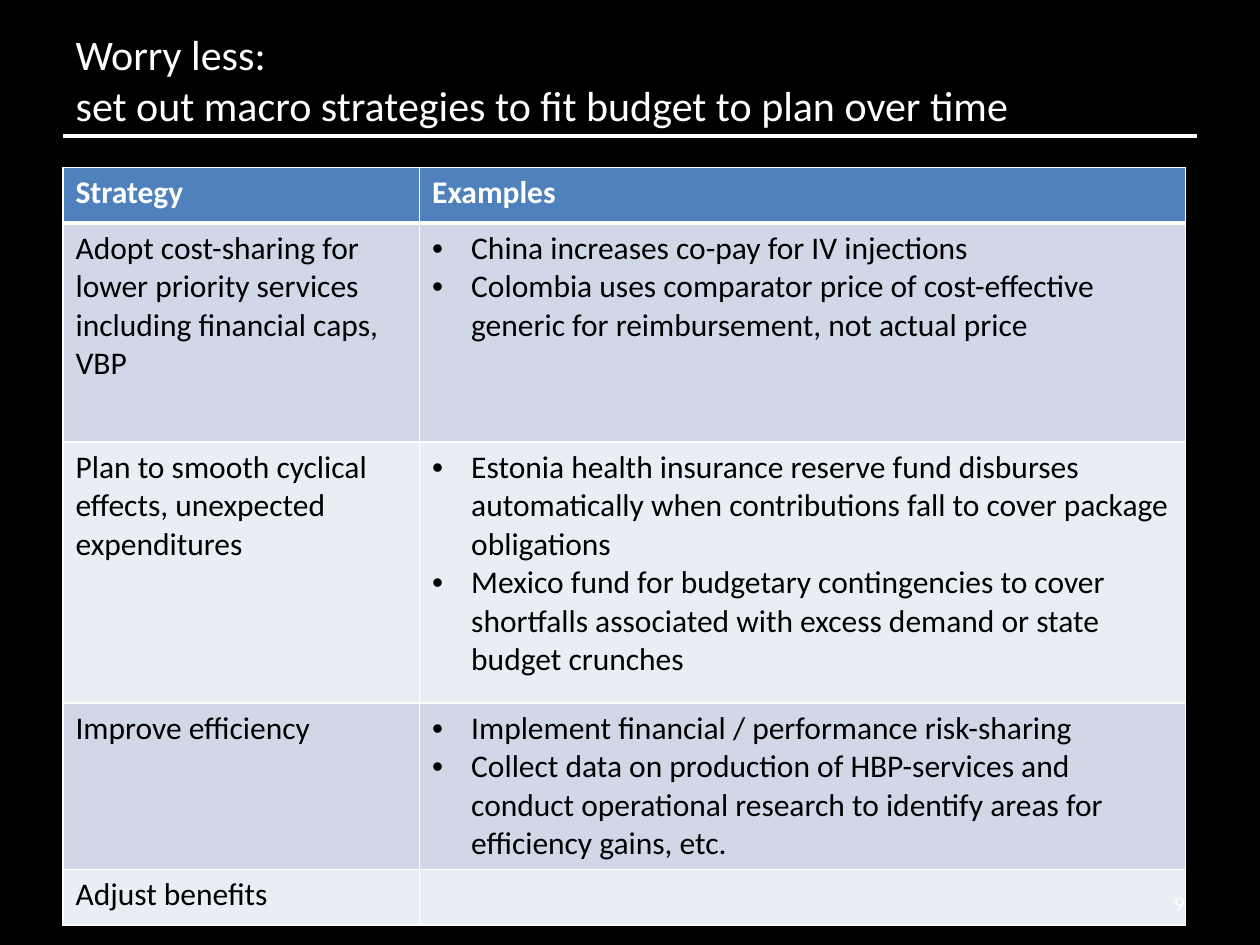
from typing import NamedTuple

from lxml.etree import SubElement
from pptx import Presentation
from pptx.dml.color import RGBColor
from pptx.enum.shapes import MSO_CONNECTOR
from pptx.enum.text import MSO_ANCHOR, MSO_AUTO_SIZE, PP_ALIGN
from pptx.oxml.ns import qn
from pptx.util import Inches, Pt

BLACK = RGBColor(0x00, 0x00, 0x00)
WHITE = RGBColor(0xFF, 0xFF, 0xFF)
HEADER_BLUE = RGBColor(0x4F, 0x81, 0xBD)
BAND_FILLS = (RGBColor(0xD0, 0xD8, 0xE8), RGBColor(0xE9, 0xED, 0xF4))

COLUMN_WIDTHS = (2.83, 6.08)
HEADER_HEIGHT = 0.44
BULLET_INDENT = Inches(0.31)


class Strategy(NamedTuple):
    name: str
    examples: tuple[str, ...]
    height: float


STRATEGIES = (
    Strategy(
        "Adopt cost-sharing for lower priority services including financial caps, VBP",
        (
            "China increases co-pay for IV injections",
            "Colombia uses comparator price of cost-effective generic for reimbursement, not actual price",
        ),
        1.74,
    ),
    Strategy(
        "Plan to smooth cyclical effects, unexpected expenditures",
        (
            "Estonia health insurance reserve fund disburses automatically when contributions fall to cover package obligations",
            "Mexico fund for budgetary contingencies to cover shortfalls associated with excess demand or state budget crunches",
        ),
        2.07,
    ),
    Strategy(
        "Improve efficiency",
        (
            "Implement financial / performance risk-sharing",
            "Collect data on production of HBP-services and conduct operational research to identify areas for efficiency gains, etc.",
        ),
        1.32,
    ),
    Strategy("Adjust benefits", (), 0.44),
)


def apply_format(target, values: dict) -> None:
    for name, value in values.items():
        setattr(target, name, value)


def format_text(paragraph, size: float, color: RGBColor, bold: bool = False) -> None:
    font = paragraph.font
    apply_format(font, {"name": "Calibri", "size": Pt(size), "bold": bold})
    font.color.rgb = color


def add_bullet(paragraph) -> None:
    properties = paragraph._p.get_or_add_pPr()
    properties.set("marL", str(BULLET_INDENT))
    properties.set("indent", str(-BULLET_INDENT))
    properties.insert_element_before(
        SubElement(properties, qn("a:buFont"), typeface="Arial"), "a:defRPr"
    )
    properties.insert_element_before(
        SubElement(properties, qn("a:buChar"), char="•"), "a:defRPr"
    )


def add_borders(cell, top: float, bottom: float) -> None:
    properties = cell._tc.get_or_add_tcPr()
    for side, width in (("L", 1), ("R", 1), ("T", top), ("B", bottom)):
        border = SubElement(properties, qn(f"a:ln{side}"), w=str(Pt(width)))
        border_fill = SubElement(border, qn("a:solidFill"))
        SubElement(border_fill, qn("a:srgbClr"), val=str(WHITE))


def fill_cell(cell, lines: tuple[str, ...], fill: RGBColor, header: bool = False,
              bulleted: bool = False, top: float = 1) -> None:
    add_borders(cell, top, 3 if header else 1)
    cell.fill.solid()
    cell.fill.fore_color.rgb = fill
    cell.text_frame.text = "\n".join(lines)
    for paragraph in cell.text_frame.paragraphs:
        format_text(paragraph, 18, WHITE if header else BLACK, header)
        if bulleted and lines:
            add_bullet(paragraph)


def add_title(slide) -> None:
    title = slide.shapes.title
    apply_format(title, {"left": Inches(0.5), "top": Inches(0.38),
                         "width": Inches(9), "height": Inches(0.7)})
    heading = title.text_frame
    heading.text = "Worry less:\vset out macro strategies to fit budget to plan over time"
    apply_format(heading, {"vertical_anchor": MSO_ANCHOR.BOTTOM, "word_wrap": True,
                           "auto_size": MSO_AUTO_SIZE.NONE})
    heading.paragraphs[0].alignment = PP_ALIGN.LEFT
    format_text(heading.paragraphs[0], 24, WHITE)


def add_title_rule(slide) -> None:
    rule = slide.shapes.add_connector(
        MSO_CONNECTOR.STRAIGHT, Inches(0.5), Inches(1.08), Inches(9.5), Inches(1.08))
    rule.line.color.rgb = WHITE
    rule.line.width = Pt(2.25)
    SubElement(rule._element.spPr, qn("a:effectLst"))


def add_strategy_table(slide) -> None:
    heights = (HEADER_HEIGHT, *(strategy.height for strategy in STRATEGIES))
    table = slide.shapes.add_table(
        len(heights), len(COLUMN_WIDTHS), Inches(0.5), Inches(1.33),
        Inches(sum(COLUMN_WIDTHS)), Inches(sum(heights))).table
    for column, width in zip(table.columns, COLUMN_WIDTHS):
        column.width = Inches(width)
    for row, height in zip(table.rows, heights):
        row.height = Inches(height)
    for index, heading in enumerate(("Strategy", "Examples")):
        fill_cell(table.cell(0, index), (heading,), HEADER_BLUE, header=True)
    for index, strategy in enumerate(STRATEGIES):
        fill = BAND_FILLS[index % 2]
        top = 3 if index == 0 else 1
        fill_cell(table.cell(index + 1, 0), (strategy.name,), fill, top=top)
        fill_cell(table.cell(index + 1, 1), strategy.examples, fill, bulleted=True, top=top)


def add_page_number(slide) -> None:
    page_number = slide.shapes.add_textbox(
        Inches(7.17), Inches(6.97), Inches(2.33), Inches(0.4)).text_frame
    apply_format(page_number, {"text": "9", "word_wrap": True,
                               "vertical_anchor": MSO_ANCHOR.MIDDLE})
    page_number.paragraphs[0].alignment = PP_ALIGN.RIGHT
    format_text(page_number.paragraphs[0], 12, WHITE)


def main() -> None:
    presentation = Presentation()
    apply_format(presentation, {"slide_width": Inches(10), "slide_height": Inches(7.5)})
    slide = presentation.slides.add_slide(presentation.slide_layouts[5])
    slide.background.fill.solid()
    slide.background.fill.fore_color.rgb = BLACK
    add_title_rule(slide)
    add_title(slide)
    add_strategy_table(slide)
    add_page_number(slide)
    presentation.save("out.pptx")


if __name__ == "__main__":
    main()
